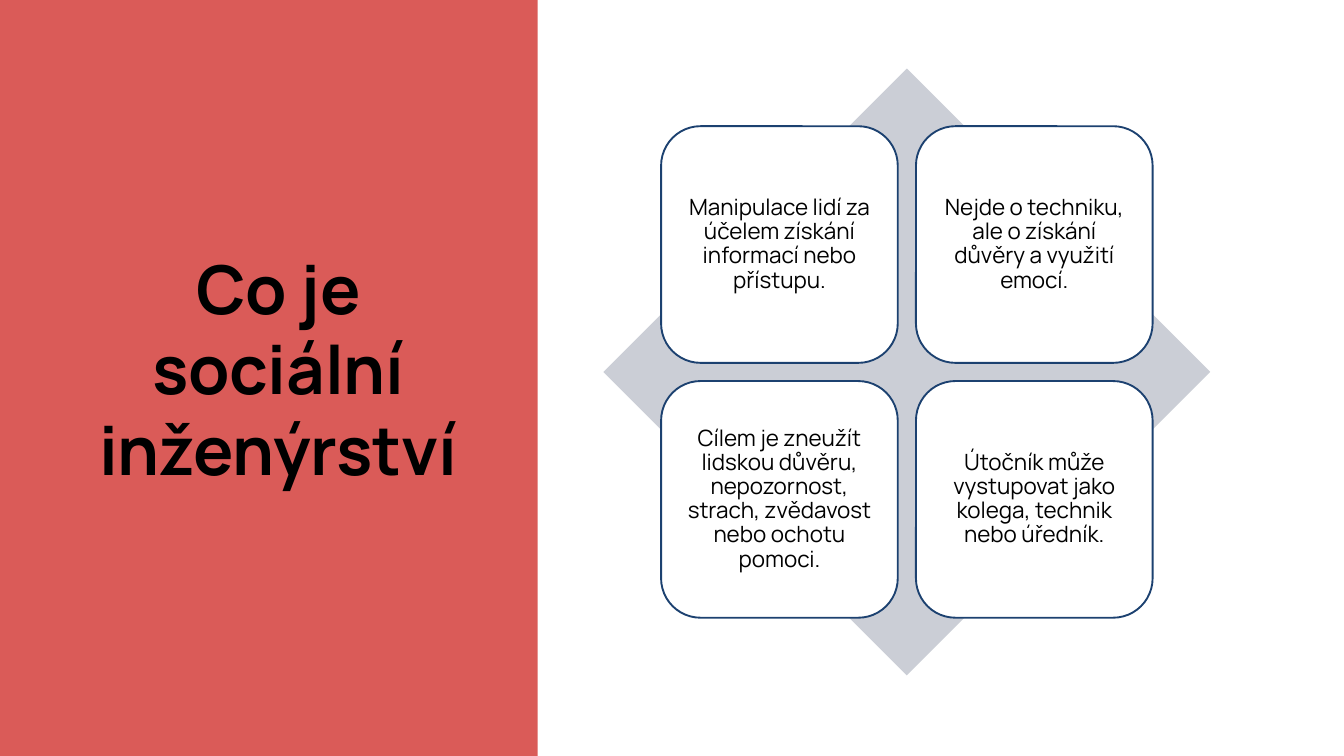
from pptx import Presentation
from pptx import util as u
from pptx.dml.color import RGBColor
from pptx.enum import shapes, text

CORAL = RGBColor(0xDA, 0x5B, 0x58)
SILVER = RGBColor(0xCB, 0xCE, 0xD6)
NAVY = RGBColor(0x1C, 0x41, 0x70)
WHITE = RGBColor(0xFF, 0xFF, 0xFF)
BLACK = RGBColor(0, 0, 0)

WIDTH, HEIGHT = 20, 11.25
TITLE = "Co je sociální inženýrství"
CARDS = [
    "Manipulace lidí za účelem získání informací nebo přístupu.",
    "Nejde o techniku, ale o získání důvěry a využití emocí.",
    "Cílem je zneužít lidskou důvěru, nepozornost, strach, zvědavost nebo ochotu pomoci.",
    "Útočník může vystupovat jako kolega, technik nebo úředník.",
]


def apply_format(target, values):
    for name, value in values.items():
        setattr(target, name, value)


def add_panel(page, kind, box, fill, outline=None):
    panel = page.shapes.add_shape(kind, *map(u.Inches, box))
    panel.shadow.inherit = False
    panel.fill.solid()
    panel.fill.fore_color.rgb = fill
    if outline is None:
        panel.line.fill.background()
    else:
        panel.line.color.rgb = outline
        panel.line.width = u.Pt(2)
    return panel


def write_text(holder, words, size, bold, spacing, inset_x, inset_y):
    frame = holder.text_frame
    apply_format(frame, {
        "word_wrap": True,
        "vertical_anchor": text.MSO_ANCHOR.MIDDLE,
        "margin_left": u.Inches(inset_x),
        "margin_right": u.Inches(inset_x),
        "margin_top": u.Inches(inset_y),
        "margin_bottom": u.Inches(inset_y),
    })
    para = frame.paragraphs[0]
    apply_format(para, {"alignment": text.PP_ALIGN.CENTER, "line_spacing": spacing})
    span = para.add_run()
    span.text = words
    apply_format(span.font, {"name": "Manrope", "size": u.Pt(size), "bold": bold})
    span.font.color.rgb = BLACK


def add_title_region(page, box):
    left, top, width, height = box
    add_panel(page, shapes.MSO_SHAPE.RECTANGLE, box, CORAL)
    title_box = (left + 1.16, top + 0.91, width - 2.03, height - 2.12)
    title = page.shapes.add_textbox(*map(u.Inches, title_box))
    write_text(title, TITLE, 72, True, 1.0, 0.1, 0.05)


def add_matrix(page, box):
    left, top, side, _ = box
    add_panel(page, shapes.MSO_SHAPE.DIAMOND, box, SILVER)
    margin, card_side, pitch = side * 0.095, side * 0.39, side * 0.42
    for index, words in enumerate(CARDS):
        row, column = divmod(index, 2)
        card_box = (left + margin + column * pitch, top + margin + row * pitch,
                    card_side, card_side)
        card = add_panel(page, shapes.MSO_SHAPE.ROUNDED_RECTANGLE, card_box, WHITE, NAVY)
        card.adjustments[0] = 1 / 6
        write_text(card, words, 24, False, 0.9, 0.13, 0.13)


def main():
    deck = Presentation()
    deck.slide_width, deck.slide_height = u.Inches(WIDTH), u.Inches(HEIGHT)
    page = deck.slides.add_slide(deck.slide_layouts[6])
    add_title_region(page, (0, 0, WIDTH * 0.4, HEIGHT))
    add_matrix(page, (8.98, 1.02, 9.03, 9.03))
    deck.save("out.pptx")


if __name__ == "__main__":
    main()
